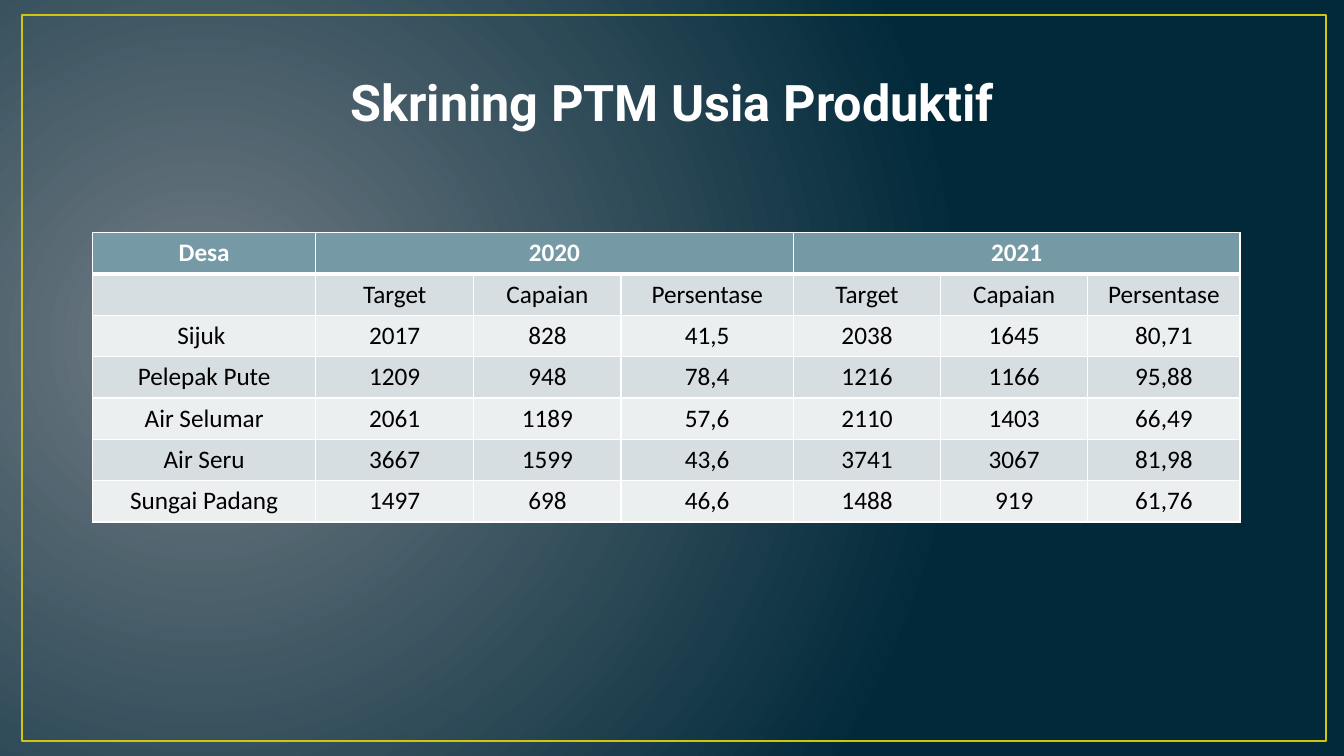
from lxml import etree
from pptx import Presentation
from pptx.dml.color import RGBColor
from pptx.enum import shapes, text
from pptx.oxml import ns
from pptx.util import Inches, Pt

TITLE = "Skrining PTM Usia Produktif"
YEARS = ["2020", "2021"]
MEASURES = ["Target", "Capaian", "Persentase"]
VILLAGES = [
    ("Sijuk ", "2017", "828", "41,5", "2038", "1645", "80,71"),
    ("Pelepak Pute", "1209", "948", "78,4", "1216", "1166", "95,88"),
    ("Air Selumar", "2061", "1189", "57,6", "2110", "1403", "66,49"),
    ("Air Seru", "3667", "1599", "43,6", "3741", "3067", "81,98"),
    ("Sungai Padang", "1497", "698", "46,6", "1488", "919", "61,76"),
]
COLUMN_WIDTHS = [2.21, 1.57, 1.46, 1.71, 1.46, 1.46, 1.51]
ROW_HEIGHT = 0.41

WHITE = RGBColor(0xFF, 0xFF, 0xFF)
BLACK = RGBColor(0x00, 0x00, 0x00)
GLOW = RGBColor(0x71, 0x7C, 0x84)
NAVY = RGBColor(0x01, 0x29, 0x3A)
YELLOW = RGBColor(0xCF, 0xC6, 0x0D)
HEADER = RGBColor(0x75, 0x9A, 0xA5)
BANDS = [RGBColor(0xEC, 0xEF, 0xF0), RGBColor(0xD6, 0xDE, 0xE1)]


def write(frame, words, font="Calibri", size=18, color=BLACK, bold=False, spacing=None):
    paragraph = frame.paragraphs[0]
    paragraph.alignment = text.PP_ALIGN.CENTER
    paragraph.line_spacing = spacing
    run = paragraph.add_run()
    run.text = words
    run.font.name = font
    run.font.size = Pt(size)
    run.font.bold = bold
    run.font.color.rgb = color


def add_borders(cell, **widths):
    """Draw white cell borders; widths are points by side: L, R, T, B."""
    properties = cell._tc.get_or_add_tcPr()
    for side in "LRTB":
        line = etree.SubElement(properties, ns.qn(f"a:ln{side}"), w=str(Pt(widths.get(side, 1))))
        solid = etree.SubElement(line, ns.qn("a:solidFill"))
        etree.SubElement(solid, ns.qn("a:srgbClr"), val=str(WHITE))


def paint_background(slide):
    """Fill the slide with a radial glow centred left of the middle."""
    fill = slide.background.fill
    fill.gradient()
    for stop, color in zip(fill.gradient_stops, (GLOW, NAVY)):
        stop.color.rgb = color
    linear = next(slide.element.iter(ns.qn("a:lin")))
    circle = etree.Element(ns.qn("a:path"), path="circle")
    etree.SubElement(circle, ns.qn("a:fillToRect"), l="15000", t="50000", r="85000", b="60000")
    linear.getparent().replace(linear, circle)


def add_frame(slide):
    frame = slide.shapes.add_shape(shapes.MSO_SHAPE.RECTANGLE, Inches(0.22), Inches(0.15),
                                   Inches(12.93), Inches(7.2))
    frame.shadow.inherit = False
    frame.fill.background()
    frame.line.color.rgb = YELLOW
    frame.line.width = Pt(1.5)
    slide.shapes._spTree.insert(2, frame._element)  # behind the title


def add_title(slide):
    title = slide.shapes.title
    title.left, title.top = Inches(0.92), Inches(0.6)
    title.width, title.height = Inches(11.5), Inches(0.88)
    title.text_frame.vertical_anchor = text.MSO_ANCHOR.MIDDLE
    write(title.text_frame, TITLE, font="Roboto", size=36, color=WHITE, bold=True, spacing=0.9)


def add_screening_table(slide):
    span = len(MEASURES)
    year_row = ["Desa"]
    for year in YEARS:
        year_row += [year] + [""] * (span - 1)
    rows = [year_row, [""] + MEASURES * len(YEARS), *VILLAGES]
    table = slide.shapes.add_table(len(rows), len(COLUMN_WIDTHS), Inches(0.92), Inches(2.31),
                                   Inches(sum(COLUMN_WIDTHS)), Inches(ROW_HEIGHT * len(rows))).table
    for column, width in zip(table.columns, COLUMN_WIDTHS):
        column.width = Inches(width)
    for r, values in enumerate(rows):
        table.rows[r].height = Inches(ROW_HEIGHT)
        for c, value in enumerate(values):
            cell = table.cell(r, c)
            add_borders(cell, T=3 if r == 1 else 1, B=3 if r == 0 else 1)
            cell.fill.solid()
            cell.fill.fore_color.rgb = BANDS[r % 2] if r else HEADER
            if value:
                write(cell.text_frame, value, color=BLACK if r else WHITE, bold=r == 0)
    for index in range(len(YEARS)):
        first = 1 + index * span
        table.cell(0, first).merge(table.cell(0, first + span - 1))


def main():
    deck = Presentation()
    deck.slide_width, deck.slide_height = Inches(13.33), Inches(7.5)
    slide = deck.slides.add_slide(deck.slide_layouts[5])
    paint_background(slide)
    add_frame(slide)
    add_title(slide)
    add_screening_table(slide)
    deck.save("out.pptx")


if __name__ == "__main__":
    main()
